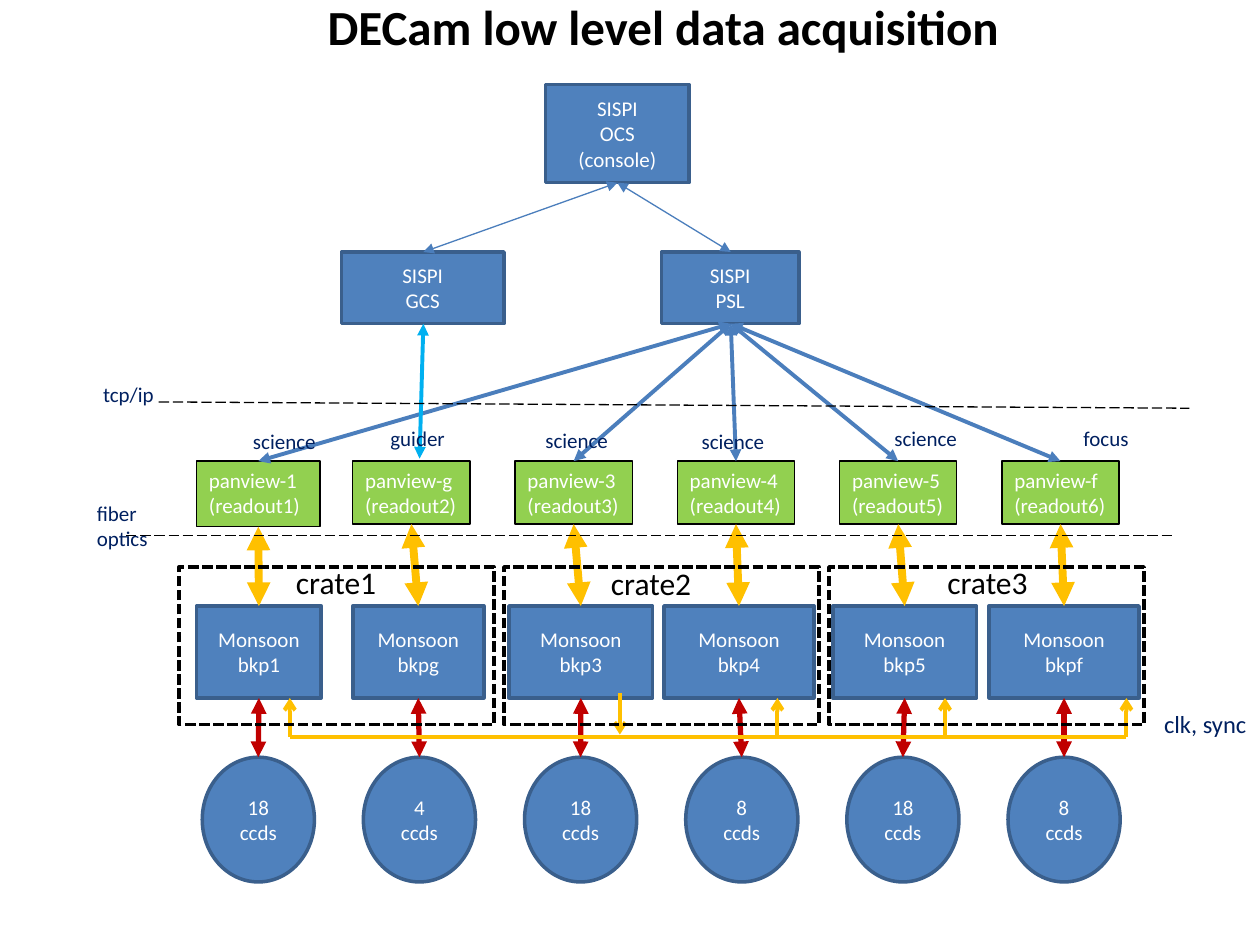
from dataclasses import dataclass
from lxml.etree import SubElement
from pptx import Presentation
from pptx.dml.color import RGBColor
from pptx.enum.dml import MSO_LINE
from pptx.enum.shapes import MSO_CONNECTOR, MSO_SHAPE
from pptx.enum.text import MSO_ANCHOR, MSO_AUTO_SIZE, PP_ALIGN
from pptx.oxml.ns import qn
from pptx.util import Inches, Pt


@dataclass(frozen=True)
class Theme:
    font: str = "Calibri"
    blue: str = "4F81BD"
    blue_edge: str = "3A5F8C"
    blue_link: str = "4B7EBC"
    guide_link: str = "00B0F0"
    green: str = "92D050"
    amber: str = "FFC000"
    red: str = "C00000"
    navy: str = "002060"
    black: str = "000000"
    white: str = "FFFFFF"
    title_size: int = 28
    crate_size: int = 18
    clock_size: int = 14
    body_size: int = 12


def apply_format(target, values):
    for name, value in values.items():
        setattr(target, name, value)


class Diagram:
    """Holds the theme and slide; lengths are cells of a 100 by 75 grid."""

    columns, rows = 100, 75

    def __init__(self, deck, theme):
        self.theme = theme
        self.cell_width = deck.slide_width / self.columns
        self.cell_height = deck.slide_height / self.rows
        self.slide = deck.slides.add_slide(deck.slide_layouts[5])
        self.shapes = self.slide.shapes

    def place(self, column, row):
        return round(column * self.cell_width), round(row * self.cell_height)

    def set_text(self, shape, text, color, size, align, frame_format, bold=False):
        frame = shape.text_frame
        frame.text = text
        apply_format(frame, frame_format)
        for paragraph in frame.paragraphs:
            paragraph.alignment = align
            apply_format(paragraph.font, {"name": self.theme.font, "size": Pt(size), "bold": bold})
            paragraph.font.color.rgb = RGBColor.from_string(color)

    def title(self, text, left, top, width, height):
        heading = self.shapes.title
        heading.left, heading.top = self.place(left, top)
        heading.width, heading.height = self.place(width, height)
        self.set_text(heading, text, self.theme.black, self.theme.title_size, PP_ALIGN.LEFT,
                      {"word_wrap": False, "vertical_anchor": MSO_ANCHOR.TOP,
                       "auto_size": MSO_AUTO_SIZE.SHAPE_TO_FIT_TEXT}, bold=True)

    def outline(self, kind, box, fill, edge, weight):
        left, top, width, height = box
        shape = self.shapes.add_shape(kind, *self.place(left, top), *self.place(width, height))
        shape.shadow.inherit = False
        if fill:
            shape.fill.solid()
            shape.fill.fore_color.rgb = RGBColor.from_string(fill)
        else:
            shape.fill.background()
        shape.line.color.rgb = RGBColor.from_string(edge)
        shape.line.width = Pt(weight)
        return shape

    def node(self, text, box, kind=MSO_SHAPE.RECTANGLE):
        shape = self.outline(kind, box, self.theme.blue, self.theme.blue_edge, 2)
        self.set_text(shape, text, self.theme.white, self.theme.body_size, PP_ALIGN.CENTER,
                      {"word_wrap": True, "vertical_anchor": MSO_ANCHOR.MIDDLE})

    def readout(self, text, box):
        shape = self.outline(MSO_SHAPE.RECTANGLE, box, self.theme.green, self.theme.black, 0.75)
        self.set_text(shape, text, self.theme.white, self.theme.body_size, PP_ALIGN.LEFT,
                      {"word_wrap": False, "vertical_anchor": MSO_ANCHOR.TOP,
                       "auto_size": MSO_AUTO_SIZE.SHAPE_TO_FIT_TEXT})

    def crate(self, box):
        shape = self.outline(MSO_SHAPE.RECTANGLE, box, None, self.theme.black, 2)
        shape.line.dash_style = MSO_LINE.SQUARE_DOT

    def label(self, text, box, color=None, size=None, wrap=False):
        left, top, width, height = box
        shape = self.shapes.add_textbox(*self.place(left, top), *self.place(width, height))
        self.set_text(shape, text, color or self.theme.navy, size or self.theme.body_size,
                      PP_ALIGN.LEFT,
                      {"word_wrap": wrap, "auto_size": MSO_AUTO_SIZE.SHAPE_TO_FIT_TEXT})

    def link(self, start, end, color, weight, head="triangle", tail="triangle", dash=None):
        connector = self.shapes.add_connector(
            MSO_CONNECTOR.STRAIGHT, *self.place(*start), *self.place(*end))
        connector.line.color.rgb = RGBColor.from_string(color)
        apply_format(connector.line, {"width": Pt(weight), "dash_style": dash})
        properties = connector._element.spPr
        stroke = properties.find(qn("a:ln"))
        for tag, arrow in (("a:headEnd", head), ("a:tailEnd", tail)):
            if arrow:
                SubElement(stroke, qn(tag), type=arrow)
        SubElement(properties, qn("a:effectLst"))

    def plain_line(self, start, end, color, weight, dash=None):
        self.link(start, end, color, weight, head=None, tail=None, dash=dash)


# readout name, number, role, role left and top, board left and width, CCD count
CHANNELS = [
    ("1", 1, "science", 19.1, 33.5, 15.6, 9.9, 18),
    ("g", 2, "guider", 30, 33.3, 28, 10.4, 4),
    ("3", 3, "science", 42.3, 33.4, 40.4, 11.4, 18),
    ("4", 4, "science", 54.7, 33.5, 52.7, 11.9, 8),
    ("5", 5, "science", 70, 33.3, 66.1, 11.4, 18),
    ("f", 6, "focus", 85, 33.3, 78.5, 11.9, 8),
]
ROLE_WIDTHS = {"science": 7.4, "guider": 6.7, "focus": 5.9}
CRATE_LABELS = [(22.5, 44.2), (47.5, 44.3), (74.2, 44.2)]
READOUT_TOP, BOARD_TOP, BOARD_BOTTOM = 36.6, 48.1, 55.4
CCD_TOP, CLOCK_ROW = 60.1, 58.5
CONSOLE, GCS, PSL = (49, 14.5), (33.6, 25.7), (58, 25.7)


def draw_channel(diagram, index, channel):
    theme = diagram.theme
    name, number, role, role_left, role_top, board_left, board_width, ccds = channel
    # The first readout is a little larger and stands apart from the even row.
    left, width, height = (28 + 12.88 * (index - 1), 9.3, 5) if index else (15.6, 9.8, 5.2)
    center = left + width / 2
    board_center = board_left + board_width / 2
    ccd_center = 20.5 + 12.79 * index

    diagram.readout(f"panview-{name}\n(readout{number})", (left, READOUT_TOP, width, height))
    diagram.node(f"Monsoon\nbkp{name}",
                 (board_left, BOARD_TOP, board_width, BOARD_BOTTOM - BOARD_TOP))
    diagram.node(f"{ccds}\nccds", (ccd_center - 4.45, CCD_TOP, 8.9, 9.9), MSO_SHAPE.OVAL)
    if role == "guider":
        diagram.link(GCS, (33.3, 36.4), theme.guide_link, 2.25)
    else:
        diagram.link(PSL, (center, READOUT_TOP), theme.blue_link, 2.25)
    diagram.link((center, READOUT_TOP + height), (board_center, BOARD_TOP), theme.amber, 4.5)
    diagram.link((board_center, BOARD_BOTTOM), (ccd_center, CCD_TOP), theme.red, 3)
    diagram.label(role, (role_left, role_top, ROLE_WIDTHS[role], 3.1))


def draw_clock(diagram):
    amber = diagram.theme.amber
    taps = [23, 61.7, 75, 89.4]
    diagram.plain_line((taps[0], CLOCK_ROW), (taps[-1], CLOCK_ROW), amber, 2.25)
    for column in taps:
        diagram.link((column, CLOCK_ROW), (column, BOARD_BOTTOM), amber, 2.25,
                     head=None, tail="arrow")
    diagram.link((49.2, 58.3), (49.2, 55), amber, 2.25, head="arrow", tail=None)
    diagram.label("clk, sync", (91.4, 55.8, 8.6, 3.4), size=diagram.theme.clock_size)


def main():
    deck = Presentation()
    deck.slide_width, deck.slide_height = Inches(10), Inches(7.5)
    theme = Theme()
    diagram = Diagram(deck, theme)
    diagram.title("DECam low level data acquisition", 25, -0.8, 55.9, 5.7)

    diagram.node("SISPI\nOCS\n(console)", (43.3, 6.7, 11.4, 7.8))
    diagram.node("SISPI\nGCS", (27.1, 20, 12.9, 5.7))
    diagram.node("SISPI\nPSL", (52.5, 20, 10.9, 5.7))
    for column, _ in (GCS, PSL):
        diagram.link(CONSOLE, (column, 20), theme.blue_link, 0.75)

    for index, channel in enumerate(CHANNELS):
        draw_channel(diagram, index, channel)
    draw_clock(diagram)

    for start, end in (((12.6, 31.9), (94.4, 32.4)), ((10, 42.5), (93.2, 42.5))):
        diagram.plain_line(start, end, theme.black, 0.75, MSO_LINE.LONG_DASH)
    diagram.label("tcp/ip", (7.2, 29.8, 6.4, 3.1))
    diagram.label("fiber optics", (6.7, 39.2, 6.9, 5.2), wrap=True)

    for index, (left, top) in enumerate(CRATE_LABELS):
        diagram.crate((14.2 + 25.8 * index, 45, 25, 12.5))
        diagram.label(f"crate{index + 1}", (left, top, 8.5, 4), theme.black, theme.crate_size)

    deck.save("out.pptx")


if __name__ == "__main__":
    main()
